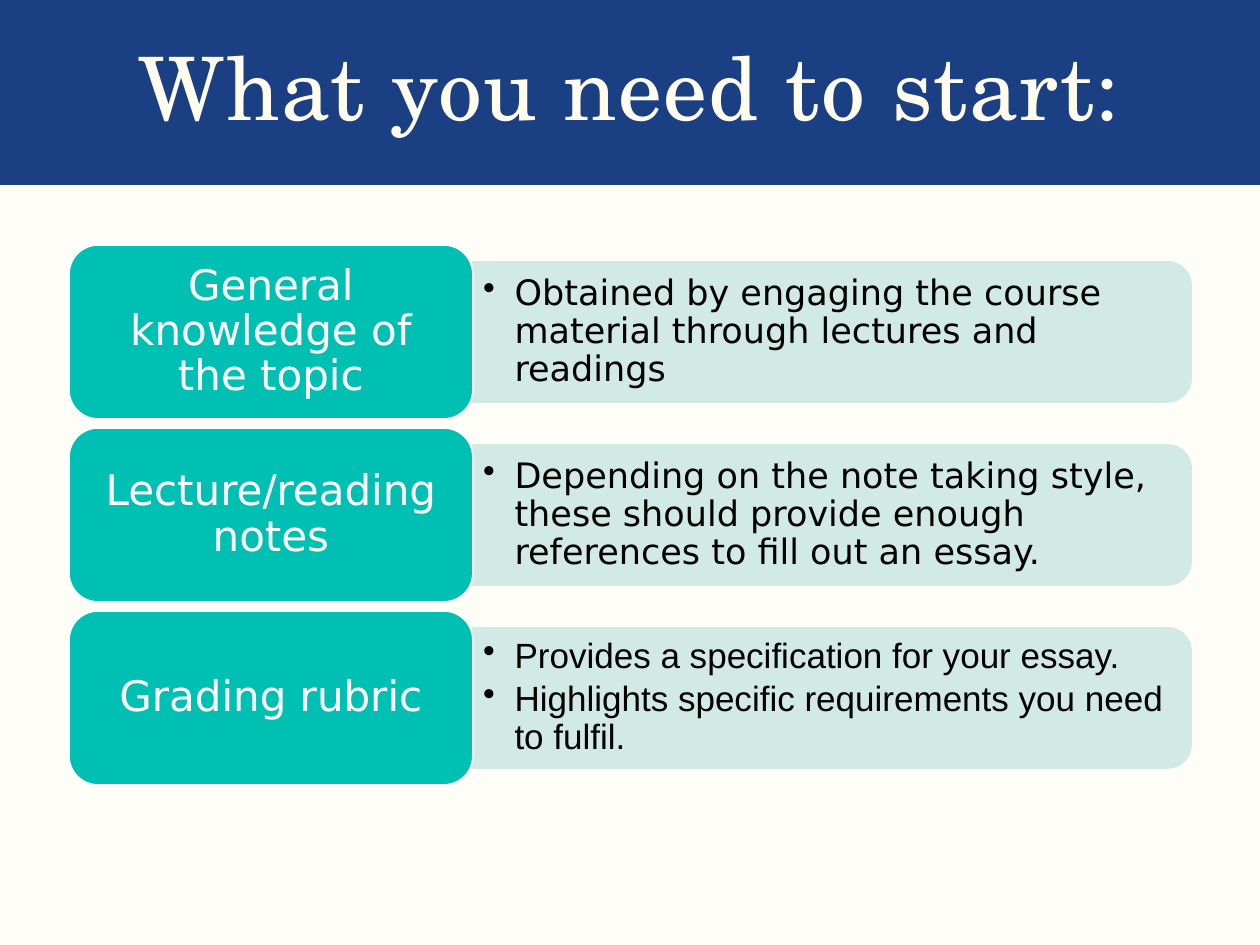
"""Build the essay checklist slide."""
from lxml import etree
from pptx import Presentation
from pptx.dml.color import RGBColor
from pptx.enum.shapes import MSO_SHAPE
from pptx.enum.text import MSO_ANCHOR, MSO_AUTO_SIZE, PP_ALIGN
from pptx.oxml.ns import qn
from pptx.util import Emu, Pt

RECT = MSO_SHAPE.RECTANGLE
ROUND = MSO_SHAPE.ROUNDED_RECTANGLE
TAB = MSO_SHAPE.ROUND_2_SAME_RECTANGLE
MIDDLE = MSO_ANCHOR.MIDDLE
LEFT, CENTER = PP_ALIGN.LEFT, PP_ALIGN.CENTER
FIXED = MSO_AUTO_SIZE.NONE

CREAM = RGBColor(0xFF, 0xFD, 0xF8)
IVORY = RGBColor(0xFF, 0xFC, 0xEE)
NAVY = RGBColor(0x1A, 0x3F, 0x82)
TEAL = RGBColor(0x00, 0xBF, 0xB3)
MINT = RGBColor(0xD1, 0xEA, 0xE6)
WHITE = RGBColor(0xFF, 0xFF, 0xFF)
BLACK = RGBColor(0x00, 0x00, 0x00)
SANS = "DejaVu Sans"

ROWS = [
    ("General knowledge of the topic", SANS,
     ["Obtained by engaging the course material through lectures and readings"]),
    ("Lecture/reading notes", SANS,
     ["Depending on the note taking style, these should provide enough "
      "references to fill out an essay."]),
    ("Grading rubric", "Arial",
     ["Provides a specification for your essay.",
      "Highlights specific requirements you need to fulfil."]),
]


def box(*area):
    return [Emu(914400 * px // 126) for px in area]


def write(shape, lines, size, color, font=SANS, align=CENTER, bullet=False, after=0):
    frame = shape.text_frame
    frame.word_wrap = True
    frame.auto_size = FIXED
    frame.vertical_anchor = MIDDLE
    frame.text = "\n".join(lines)
    for para in frame.paragraphs:
        if bullet:
            props = para._p.get_or_add_pPr()
            props.set("marL", "228600")
            props.set("indent", "-228600")
            etree.SubElement(props, qn("a:buChar"), char="•")
        para.alignment = align
        para.line_spacing = 0.9
        para.space_after = Pt(after)
        run = para.runs[0].font
        run.name, run.size, run.color.rgb = font, Pt(size), color


deck = Presentation()
deck.slide_width, deck.slide_height = box(1260, 945)
slide = deck.slides.add_slide(deck.slide_layouts[5])
slide.background.fill.solid()
slide.background.fill.fore_color.rgb = CREAM
shapes = slide.shapes

band = shapes.add_shape(RECT, *box(0, 0, 1260, 185))
band.shadow.inherit = False
band.fill.solid()
band.fill.fore_color.rgb = NAVY
band.line.fill.background()

title = shapes.title
title.left, title.top, title.width, title.height = box(82, 39, 1096, 107)
write(title, ["What you need to start:"], 50, IVORY, font="TeX Gyre Schola")
title.text_frame.paragraphs[0].runs[0].font._element.set("spc", "80")
shapes._spTree.append(title._element)

WIDE, HIGH, PITCH = 718, 140, 183
SHIFT = (WIDE - HIGH) // 2
for row, (name, font, notes) in enumerate(ROWS):
    top = 245 + row * PITCH
    panel = shapes.add_shape(TAB, *box(473 + SHIFT, top + 17 - SHIFT, HIGH, WIDE))
    panel.rotation = 90
    label = shapes.add_shape(ROUND, *box(69, top, 404, 174))
    for shape, fill, edge in ((panel, MINT, MINT), (label, TEAL, WHITE)):
        shape.shadow.inherit = False
        shape.fill.solid()
        shape.fill.fore_color.rgb = fill
        shape.line.color.rgb = edge
        shape.line.width = Pt(1)
    write(label, [name], 24, WHITE)

    text = shapes.add_textbox(*box(473, top + 24, 712, 126))
    frame = text.text_frame
    frame.margin_left, frame.margin_top, frame.margin_right, frame.margin_bottom = box(10, 5, 10, 5)
    write(text, notes, 20, BLACK, font=font, align=LEFT, bullet=True, after=3)

deck.save("out.pptx")
